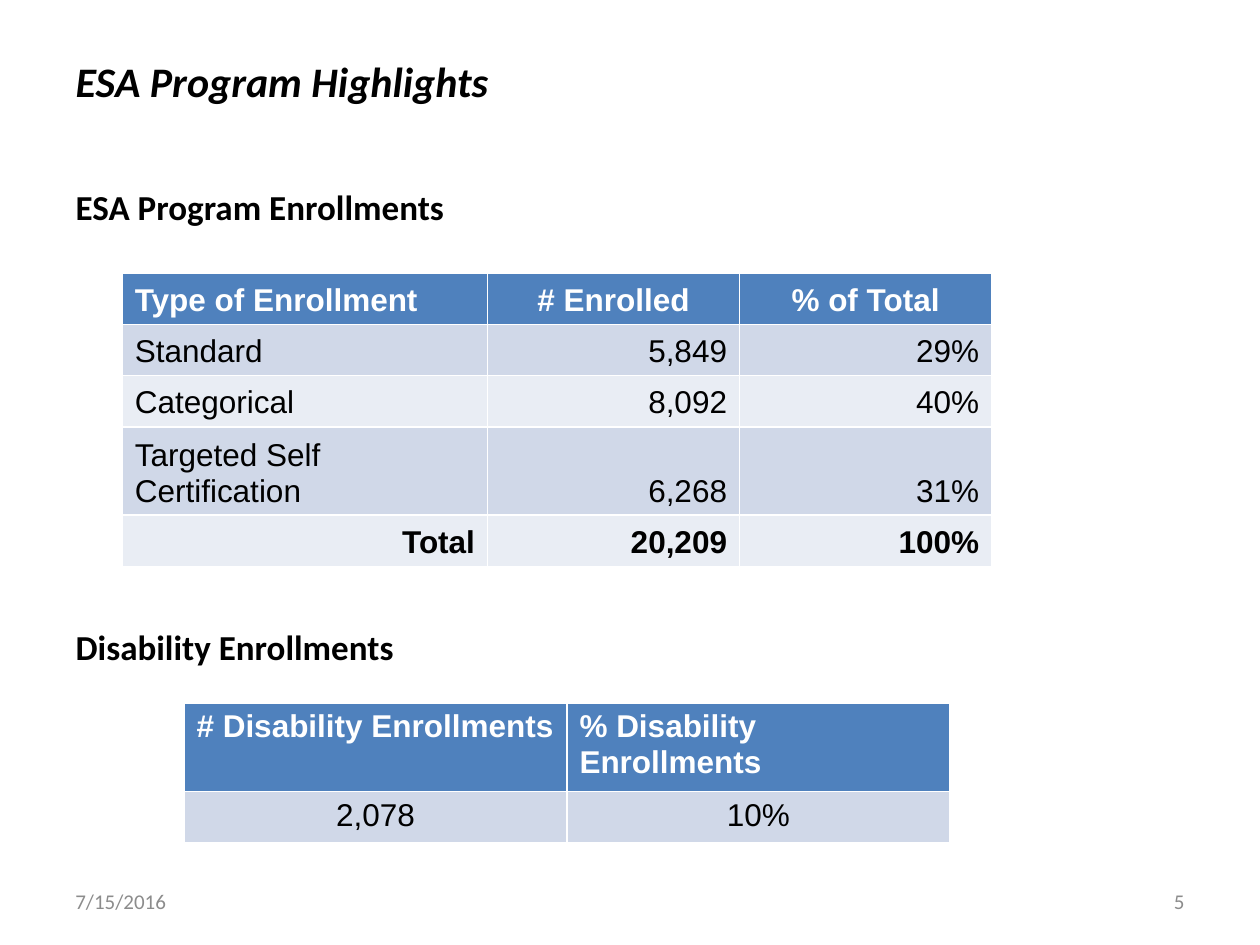
from dataclasses import dataclass

from pptx import Presentation
from pptx.dml.color import RGBColor as Rgb
from pptx.enum.text import MSO_ANCHOR as Anchor, MSO_AUTO_SIZE as Fit, PP_ALIGN as Align
from pptx.oxml.ns import qn
from pptx.util import Inches, Pt


@dataclass(frozen=True)
class Theme:
    ink: str = "000000"
    white: str = "FFFFFF"
    gray: str = "8C8C8C"
    head: str = "4F81BD"
    bands: tuple = ("D0D8E8", "E9EDF4")
    text: str = "Calibri"
    grid: str = "Arial"
    title: int = 24
    topic: int = 20
    cell: int = 18
    note: int = 12


THEME = Theme()
LEFT, MID, RIGHT = Align.LEFT, Align.CENTER, Align.RIGHT


def style(para, size, color, face=THEME.text, bold=False, italic=False, align=LEFT):
    para.alignment = align
    for run in para.runs:
        font = run.font
        font.name, font.size = face, Pt(size)
        font.bold, font.italic = bold, italic
        font.color.rgb = Rgb.from_string(color)


def place(shape, box):
    shape.left, shape.top, shape.width, shape.height = map(Inches, box)


def add_title(slide, box, text):
    shape = slide.shapes.title
    place(shape, box)
    frame = shape.text_frame
    frame.text = text
    frame.auto_size = Fit.NONE
    frame.vertical_anchor = Anchor.MIDDLE
    style(frame.paragraphs[0], THEME.title, THEME.ink, bold=True, italic=True)


def add_topics(slide, box, topics, gap):
    shape = slide.placeholders[1]
    place(shape, box)
    frame = shape.text_frame
    frame.text = "\n".join(topics)
    frame.auto_size = Fit.NONE
    for i, para in enumerate(frame.paragraphs):
        props = para._p.get_or_add_pPr()
        props.set("marL", "0")
        props.set("indent", "0")
        props.append(props.makeelement(qn("a:buNone"), {}))
        para.space_before = Pt(gap if i else 0)
        para.space_after = Pt(12)
        style(para, THEME.topic, THEME.ink, bold=True)


def add_note(slide, box, text, align):
    frame = slide.shapes.add_textbox(*map(Inches, box)).text_frame
    frame.word_wrap = True
    frame.vertical_anchor = Anchor.MIDDLE
    frame.text = text
    style(frame.paragraphs[0], THEME.note, THEME.gray, align=align)


def add_grid(slide, box, widths, rows, heads, aligns, anchor, total=False):
    frame = slide.shapes.add_table(len(rows), len(widths), *map(Inches, box))
    table = frame.table
    for col, width in zip(table.columns, widths):
        col.width = Inches(width)
    for r, row in enumerate(rows):
        last = total and r == len(rows) - 1
        for c, text in enumerate(row):
            cell = table.cell(r, c)
            cell.text = text
            cell.vertical_anchor = anchor
            cell.fill.solid()
            fill = THEME.bands[(r - 1) % 2] if r else THEME.head
            cell.fill.fore_color.rgb = Rgb.from_string(fill)
            align = RIGHT if last else aligns[c] if r else heads[c]
            style(cell.text_frame.paragraphs[0], THEME.cell,
                  THEME.ink if r else THEME.white, THEME.grid,
                  bold=last or r == 0, align=align)


def main():
    deck = Presentation()
    deck.slide_width, deck.slide_height = Inches(10), Inches(7.5)
    slide = deck.slides.add_slide(deck.slide_layouts[1])
    add_title(slide, (0.5, 0.33, 6.5, 0.62), "ESA Program Highlights")
    add_topics(slide, (0.5, 1.42, 9, 5.28),
               ("ESA Program Enrollments", "Disability Enrollments"), 215.6)
    add_note(slide, (0.5, 6.95, 2.33, 0.4), "7/15/2016", LEFT)
    add_note(slide, (7.17, 6.95, 2.33, 0.4), "5", RIGHT)
    types = (
        ("Type of Enrollment", "# Enrolled", "% of Total"),
        ("Standard", "5,849", "29%"),
        ("Categorical", "8,092", "40%"),
        ("Targeted Self Certification", "6,268", "31%"),
        ("Total", "20,209", "100%"),
    )
    add_grid(slide, (0.97, 2.17, 6.9, 2.03), (2.9, 2, 2), types,
             (LEFT, MID, MID), (LEFT, RIGHT, RIGHT), Anchor.BOTTOM, total=True)
    needs = (
        ("# Disability Enrollments", "% Disability Enrollments"),
        ("2,078", "10%"),
    )
    add_grid(slide, (1.46, 5.58, 6.08, 0.81), (3.04, 3.04), needs,
             (LEFT, LEFT), (MID, MID), Anchor.TOP)
    deck.save("out.pptx")


if __name__ == "__main__":
    main()
